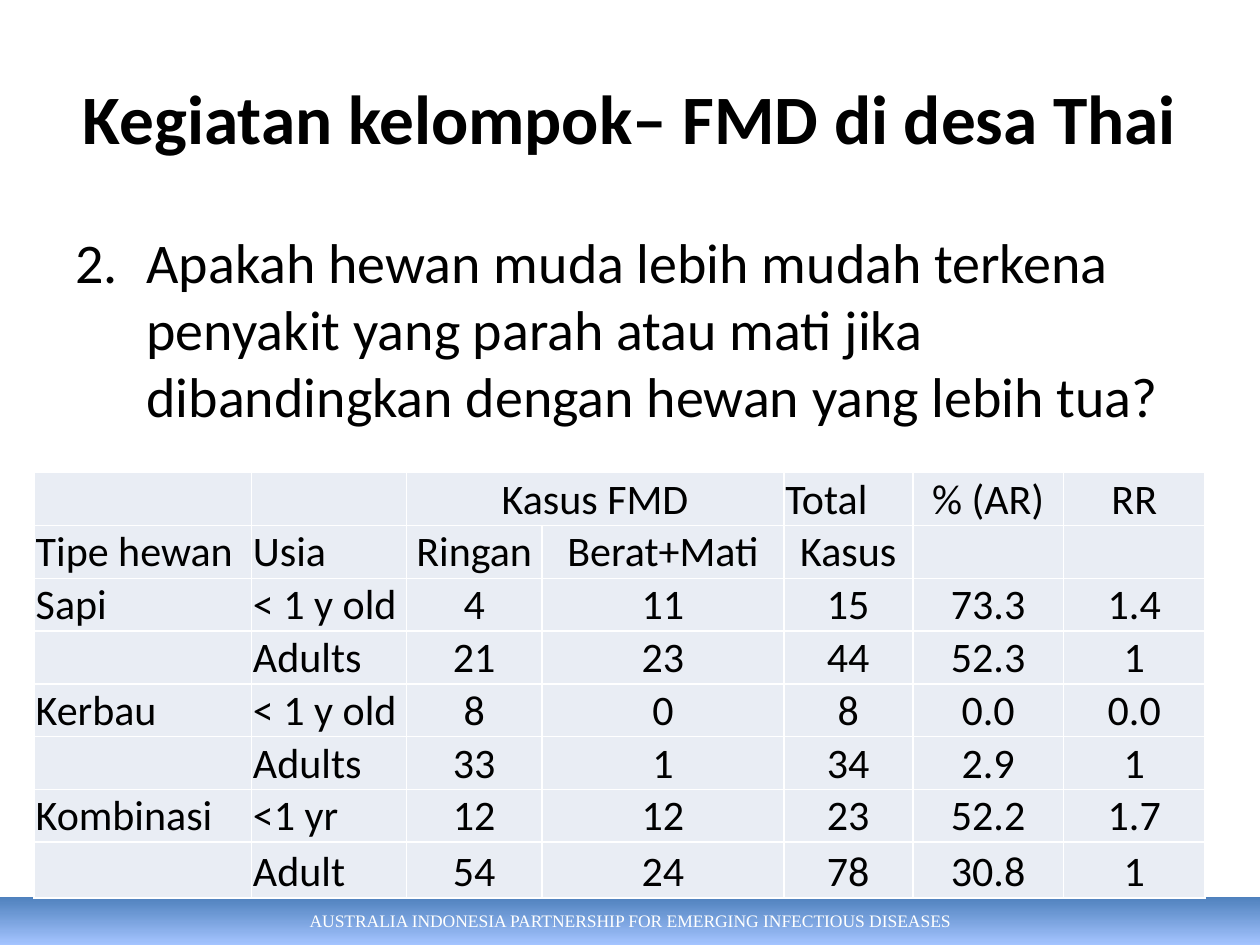
from lxml import etree
from pptx import Presentation
from pptx.dml.color import RGBColor
from pptx.enum.shapes import MSO_SHAPE
from pptx.enum.text import MSO_ANCHOR, MSO_AUTO_SIZE, PP_ALIGN
from pptx.oxml.ns import qn
from pptx.util import Cm, Pt

RECTANGLE = MSO_SHAPE.RECTANGLE
MIDDLE, BOTTOM, TOP = MSO_ANCHOR.MIDDLE, MSO_ANCHOR.BOTTOM, MSO_ANCHOR.TOP
LEFT, CENTER = PP_ALIGN.LEFT, PP_ALIGN.CENTER
NO_AUTOFIT = MSO_AUTO_SIZE.NONE

COLUMN_WIDTHS = [4.38, 3.12, 2.74, 4.87, 2.6, 3.04, 2.85]
ROW_HEIGHTS = [1.06] * 7 + [1.12]
CASES = [
    ["", "", "Kasus FMD", "", "Total", "% (AR)", "RR"],
    ["Tipe hewan", "Usia", "Ringan", "Berat+Mati", "Kasus", "", ""],
    ["Sapi", "< 1 y old", "4", "11", "15", "73.3", "1.4"],
    ["", "Adults", "21", "23", "44", "52.3", "1"],
    ["Kerbau", "< 1 y old", "8", "0", "8", "0.0", "0.0"],
    ["", "Adults", "33", "1", "34", "2.9", "1"],
    ["Kombinasi", "<1 yr", "12", "12", "23", "52.2", "1.7"],
    ["", "Adult", "54", "24", "78", "30.8", "1"],
]


def color(value):
    return RGBColor.from_string(value)


class SlideBuilder:
    text_font = "Calibri"
    footer_font = "Times New Roman"
    text_color = "000000"
    light_color = "FFFFFF"
    cell_color = "E9EDF4"
    footer_colors = ["4F81BD", "A4C4FF"]

    def __init__(self, slide):
        self.slide = slide

    def format(self, paragraph, size, alignment, bold=False, font=None, font_color=None):
        paragraph.alignment = alignment
        paragraph.font.name = font or self.text_font
        paragraph.font.size = Pt(size)
        paragraph.font.bold = bold
        paragraph.font.color.rgb = color(font_color or self.text_color)

    def fill_placeholder(self, shape, text, box, anchor):
        shape.left, shape.top, shape.width, shape.height = map(Cm, box)
        frame = shape.text_frame
        frame.text = text
        frame.word_wrap = True
        frame.auto_size = NO_AUTOFIT
        frame.vertical_anchor = anchor
        return frame.paragraphs[0]

    def title(self, text, box):
        paragraph = self.fill_placeholder(self.slide.shapes.title, text, box, MIDDLE)
        self.format(paragraph, 39.6, CENTER, bold=True)

    def numbered_item(self, text, number, box):
        paragraph = self.fill_placeholder(self.slide.placeholders[1], text, box, TOP)
        paragraph.space_before = Pt(0)
        properties = paragraph._p.get_or_add_pPr()
        indent = Cm(1.43)
        properties.set("marL", str(indent))
        properties.set("indent", str(-indent))
        etree.SubElement(properties, qn("a:buFont"), typeface="+mj-lt")
        etree.SubElement(properties, qn("a:buAutoNum"), type="arabicPeriod", startAt=str(number))
        self.format(paragraph, 32, LEFT)

    def footer(self, text, box):
        shape = self.slide.shapes.add_shape(RECTANGLE, *map(Cm, box))
        shape.shadow.inherit = False
        shape.line.fill.background()
        shape.fill.gradient()
        shape.fill.gradient_angle = 270
        for position, (stop, value) in enumerate(zip(shape.fill.gradient_stops, self.footer_colors)):
            stop.position = position
            stop.color.rgb = color(value)
        frame = shape.text_frame
        frame.text = text
        frame.word_wrap = True
        frame.vertical_anchor = MIDDLE
        self.format(frame.paragraphs[0], 10, CENTER, font=self.footer_font, font_color=self.light_color)

    def borders(self, cell):
        properties = cell._tc.get_or_add_tcPr()
        for position, side in enumerate(["lnL", "lnR", "lnT", "lnB"]):
            line = etree.Element(qn(f"a:{side}"), w=str(Pt(1)))
            fill = etree.SubElement(line, qn("a:solidFill"))
            etree.SubElement(fill, qn("a:srgbClr"), val=self.light_color)
            properties.insert(position, line)

    def cell(self, cell, text, alignment):
        cell.text = text
        cell.vertical_anchor = BOTTOM
        cell.margin_left = cell.margin_right = cell.margin_top = Cm(0.03)
        cell.margin_bottom = 0
        cell.fill.solid()
        cell.fill.fore_color.rgb = color(self.cell_color)
        self.borders(cell)
        self.format(cell.text_frame.paragraphs[0], 24, alignment)

    def table(self, rows, left, top):
        size = sum(COLUMN_WIDTHS), sum(ROW_HEIGHTS)
        frame = self.slide.shapes.add_table(
            len(rows), len(COLUMN_WIDTHS), Cm(left), Cm(top), *map(Cm, size))
        table = frame.table
        table.first_row = table.horz_banding = False
        for column, width in zip(table.columns, COLUMN_WIDTHS):
            column.width = Cm(width)
        for row, height in zip(table.rows, ROW_HEIGHTS):
            row.height = Cm(height)
        for row_index, row in enumerate(rows):
            for column_index, text in enumerate(row):
                alignment = LEFT if column_index < 2 or text == "Total" else CENTER
                self.cell(table.cell(row_index, column_index), text, alignment)
        table.cell(0, 2).merge(table.cell(0, 3))


def main():
    presentation = Presentation()
    presentation.slide_width, presentation.slide_height = Cm(25.4), Cm(19.05)
    builder = SlideBuilder(presentation.slides.add_slide(presentation.slide_layouts[1]))
    builder.footer("AUSTRALIA INDONESIA PARTNERSHIP FOR EMERGING INFECTIOUS DISEASES",
                   (0, 18.08, 25.4, 0.97))
    builder.title("Kegiatan kelompok– FMD di desa Thai", (1.27, 0.76, 22.86, 3.18))
    builder.numbered_item(
        "Apakah hewan muda lebih mudah terkena penyakit yang parah atau mati jika "
        "dibandingkan dengan hewan yang lebih tua?", 2, (1.27, 4.45, 22.86, 5.08))
    builder.table(CASES, 0.69, 9.53)
    presentation.save("out.pptx")


if __name__ == "__main__":
    main()
